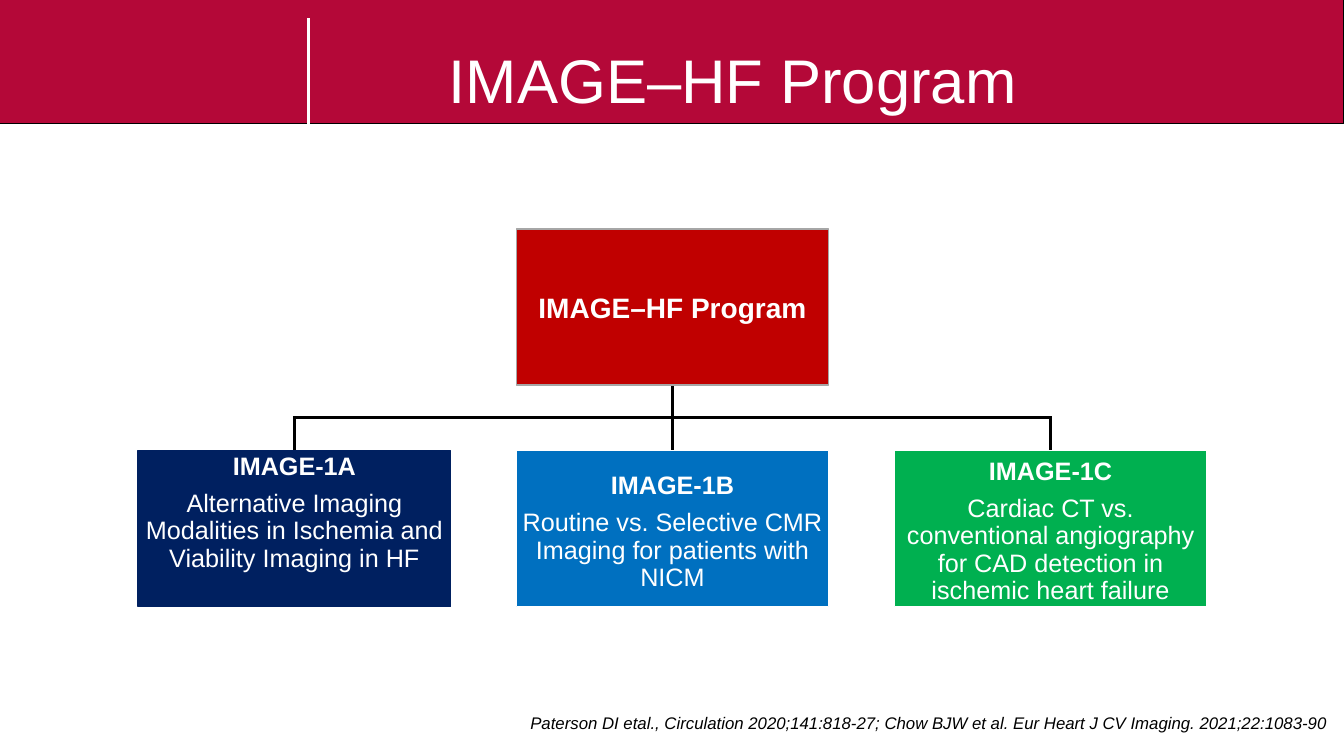
from dataclasses import dataclass

import pptx
import pptx.dml.color
import pptx.enum.shapes
import pptx.enum.text
import pptx.oxml
import pptx.util
from pptx.util import Inches

COLORS = {
    "crimson": "B40838", "red": "C00000", "navy": "002060", "blue": "0070C0",
    "green": "00B050", "grey": "A6A6A6", "white": "FFFFFF", "black": "000000",
}
ALIGN = pptx.enum.text.PP_ALIGN
ANCHOR = pptx.enum.text.MSO_ANCHOR

SLIDE_WIDTH, SLIDE_HEIGHT = 13.33, 7.5
HEADER_HEIGHT = 1.23
BOX_WIDTH, BOX_HEIGHT = 3.1, 1.55
STUDY_LEFT, STUDY_TOP, STUDY_PITCH = 1.37, 4.47, 3.75
PROGRAM_TOP = 2.27
BRANCH_WEIGHT = 2.25


@dataclass
class Study:
    code: str
    topic: str
    fill: str
    border: str
    inset_top: float


STUDIES = [
    Study("IMAGE-1A", "Alternative Imaging Modalities in Ischemia and Viability Imaging in HF",
          "navy", "navy", 0),
    Study("IMAGE-1B", "Routine vs. Selective CMR Imaging for patients with NICM",
          "blue", "white", 0.19),
    Study("IMAGE-1C", "Cardiac CT vs. conventional angiography for CAD detection in ischemic heart failure",
          "green", "white", 0.05),
]


def rgb(color: str) -> pptx.dml.color.RGBColor:
    return pptx.dml.color.RGBColor.from_string(COLORS[color])


def add_rectangle(slide, left: float, top: float, width: float, height: float,
                  fill: str, border: str, weight: float = 1):
    rectangle = slide.shapes.add_shape(
        pptx.enum.shapes.MSO_SHAPE.RECTANGLE,
        Inches(left), Inches(top), Inches(width), Inches(height))
    rectangle.shadow.inherit = False
    rectangle.fill.solid()
    rectangle.fill.fore_color.rgb = rgb(fill)
    rectangle.line.color.rgb = rgb(border)
    rectangle.line.width = pptx.util.Pt(weight)
    return rectangle


def add_line(slide, x1: float, y1: float, x2: float, y2: float, color: str, weight: float) -> None:
    line = slide.shapes.add_connector(
        pptx.enum.shapes.MSO_CONNECTOR.STRAIGHT,
        Inches(x1), Inches(y1), Inches(x2), Inches(y2))
    line.line.color.rgb = rgb(color)
    line.line.width = pptx.util.Pt(weight)
    properties = line._element.spPr
    properties.append(properties.makeelement(pptx.oxml.ns.qn("a:effectLst"), {}))


def format_frame(shape, anchor, inset_top: float = 0, inset_side: float = 0):
    frame_format = {
        "word_wrap": True, "vertical_anchor": anchor,
        "margin_left": Inches(inset_side), "margin_right": Inches(inset_side),
        "margin_top": Inches(inset_top), "margin_bottom": 0,
    }
    for attribute, value in frame_format.items():
        setattr(shape.text_frame, attribute, value)
    return shape.text_frame


def write(paragraph, text: str, size: float, color: str, align,
          bold: bool = False, italic: bool = False) -> None:
    paragraph.text = text
    paragraph.alignment = align
    font_format = {"name": "Arial", "size": pptx.util.Pt(size), "bold": bold, "italic": italic}
    for attribute, value in font_format.items():
        setattr(paragraph.font, attribute, value)
    paragraph.font.color.rgb = rgb(color)


def add_label(slide, left: float, top: float, width: float, height: float,
              text: str, size: float, color: str, italic: bool = False) -> None:
    label = slide.shapes.add_textbox(Inches(left), Inches(top), Inches(width), Inches(height))
    frame = format_frame(label, ANCHOR.TOP)
    write(frame.paragraphs[0], text, size, color, ALIGN.LEFT, italic=italic)


def add_study(slide, study: Study, left: float) -> None:
    box = add_rectangle(slide, left, STUDY_TOP, BOX_WIDTH, BOX_HEIGHT, study.fill, study.border)
    frame = format_frame(box, ANCHOR.TOP, study.inset_top, 0.04)
    write(frame.paragraphs[0], study.code, 18, "white", ALIGN.CENTER, bold=True)
    topic = frame.add_paragraph()
    topic.line_spacing = 0.9
    topic.space_before = pptx.util.Pt(7.2)
    write(topic, study.topic, 18, "white", ALIGN.CENTER)


def add_branches(slide, centers: list[float]) -> None:
    first, middle, last = centers
    top = PROGRAM_TOP + BOX_HEIGHT
    bus = (top + STUDY_TOP) / 2
    overlap = BRANCH_WEIGHT / 72 / 2  # closes the outer corners
    segments = [
        (middle, top, middle, STUDY_TOP),
        (first - overlap, bus, last + overlap, bus),
        (first, bus, first, STUDY_TOP),
        (last, bus, last, STUDY_TOP),
    ]
    for segment in segments:
        add_line(slide, *segment, "black", BRANCH_WEIGHT)


def main() -> None:
    presentation = pptx.Presentation()
    presentation.slide_width = Inches(SLIDE_WIDTH)
    presentation.slide_height = Inches(SLIDE_HEIGHT)
    slide = presentation.slides.add_slide(presentation.slide_layouts[6])

    # Header
    add_rectangle(slide, 0, 0, SLIDE_WIDTH, HEADER_HEIGHT, "crimson", "black", 0.75)
    add_line(slide, 3.06, 0.18, 3.06, HEADER_HEIGHT, "white", 1.5)
    add_label(slide, 4.45, 0.42, 8.32, 0.7, "IMAGE–HF Program", 44, "white")

    # Program tree
    lefts = [STUDY_LEFT + i * STUDY_PITCH for i in range(len(STUDIES))]
    add_branches(slide, [left + BOX_WIDTH / 2 for left in lefts])
    program = add_rectangle(slide, lefts[1], PROGRAM_TOP, BOX_WIDTH, BOX_HEIGHT, "red", "grey")
    frame = format_frame(program, ANCHOR.MIDDLE)
    write(frame.paragraphs[0], "IMAGE–HF Program", 20, "white", ALIGN.CENTER, bold=True)
    for study, left in zip(STUDIES, lefts):
        add_study(slide, study, left)

    # Citation
    add_label(slide, 5.26, 7.07, 8, 0.23,
              "Paterson DI etal., Circulation 2020;141:818-27; "
              "Chow BJW et al. Eur Heart J CV Imaging. 2021;22:1083-90",
              12, "black", italic=True)

    presentation.save("out.pptx")


if __name__ == "__main__":
    main()
